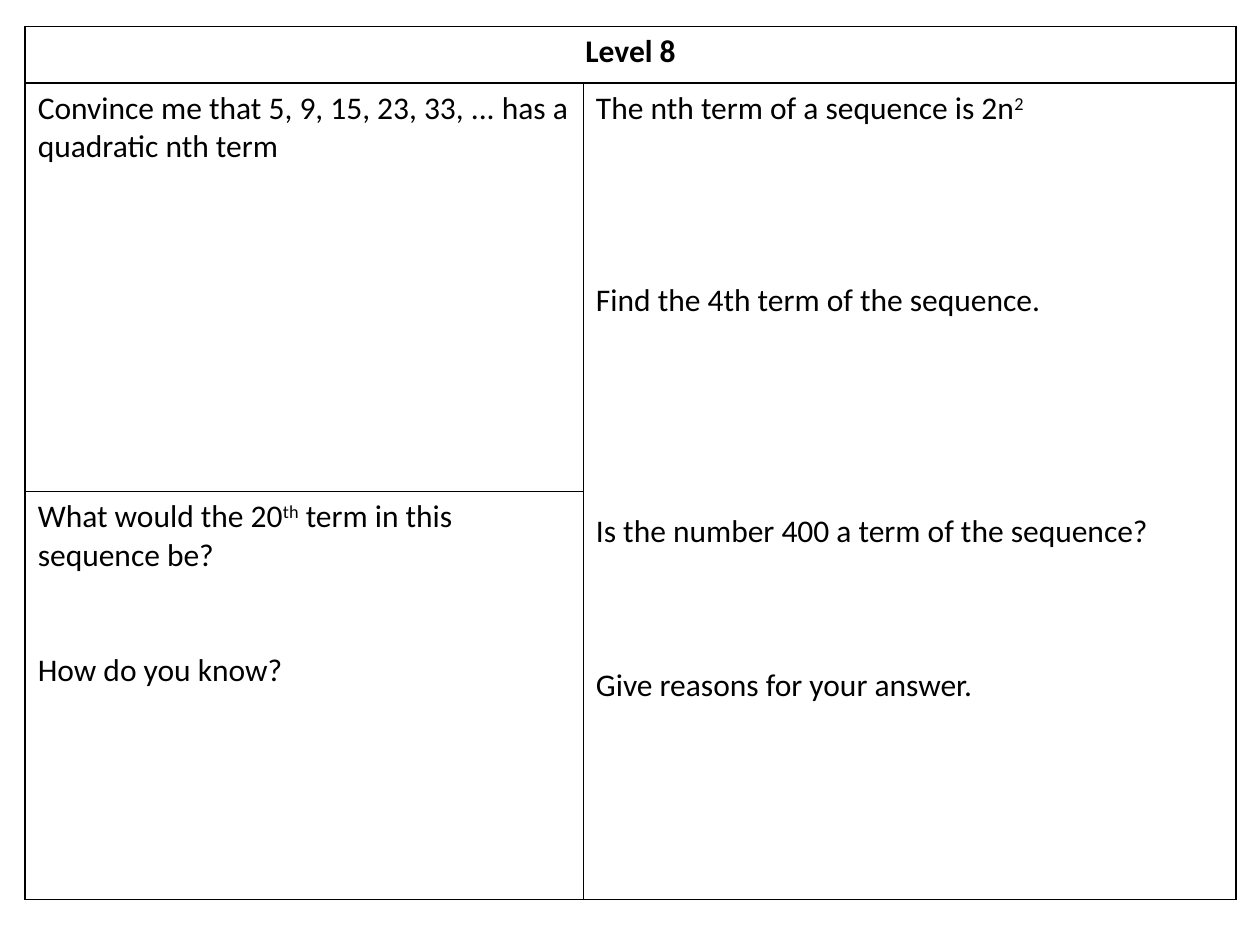
from lxml import etree
from pptx import Presentation
from pptx.dml.color import RGBColor
from pptx.enum.text import PP_ALIGN
from pptx.oxml.ns import qn
from pptx.util import Inches, Pt

CENTER, LEFT = PP_ALIGN.CENTER, PP_ALIGN.LEFT
BLACK = "000000"
FONT = "Calibri"
TEXT_SIZE = 18
LINE_HEIGHT = 22
SUPERSCRIPT = "30000"
COLUMN_WIDTHS = (4.43, 5.18)
ROW_HEIGHTS = (0.45, 3.24, 3.24)

# Each paragraph: answer lines left above it, then (text, raised) runs.
TITLE = [(0, [("Level 8", False)])]
CONVINCE = [(0, [("Convince me that 5, 9, 15, 23, 33, ... has a quadratic nth term", False)])]
TWENTIETH = [
    (0, [("What would the 20", False), ("th", True), (" term in this sequence be?", False)]),
    (2, [("How do you know?", False)]),
]
SEQUENCE = [
    (0, [("The nth term of a sequence is 2n", False), ("2", True)]),
    (4, [("Find the 4th term of the sequence.", False)]),
    (5, [("Is the number 400 a term of the sequence?", False)]),
    (3, [("Give reasons for your answer.", False)]),
]


def color(value):
    """Turn a hex string into a colour."""
    return RGBColor.from_string(value)


def add_borders(cell, value=BLACK, width=1):
    """Draw a solid line on all four sides of a cell."""
    properties = cell._tc.get_or_add_tcPr()
    for side in ("a:lnL", "a:lnR", "a:lnT", "a:lnB"):
        line = etree.SubElement(properties, qn(side), w=str(Pt(width)))
        fill = etree.SubElement(line, qn("a:solidFill"))
        etree.SubElement(fill, qn("a:srgbClr"), val=value)


def write_cell(cell, paragraphs, bold=False, align=LEFT):
    """Write paragraphs into a cell, with answer space above them."""
    frame = cell.text_frame
    for index, (blank_lines, runs) in enumerate(paragraphs):
        para = frame.add_paragraph() if index else frame.paragraphs[0]
        para.alignment = align
        para.space_before = Pt(blank_lines * LINE_HEIGHT)
        for text, raised in runs:
            span = para.add_run()
            span.text = text
            span.font.name = FONT
            span.font.size = Pt(TEXT_SIZE)
            span.font.bold = bold
            span.font.color.rgb = color(BLACK)
            if raised:
                span._r.get_or_add_rPr().set("baseline", SUPERSCRIPT)


def add_question_table(page, left, top, width, height):
    """Place the question grid in the given box."""
    frame = page.shapes.add_table(
        len(ROW_HEIGHTS), len(COLUMN_WIDTHS),
        Inches(left), Inches(top), Inches(width), Inches(height))
    table = frame.table
    table.first_row = False
    table.horz_banding = False
    for column, share in zip(table.columns, COLUMN_WIDTHS):
        column.width = Inches(width * share / sum(COLUMN_WIDTHS))
    for row, share in zip(table.rows, ROW_HEIGHTS):
        row.height = Inches(height * share / sum(ROW_HEIGHTS))
    for cell in table.iter_cells():
        add_borders(cell)
        cell.fill.background()
    table.cell(0, 0).merge(table.cell(0, 1))
    table.cell(1, 1).merge(table.cell(2, 1))
    write_cell(table.cell(0, 0), TITLE, bold=True, align=CENTER)
    write_cell(table.cell(1, 0), CONVINCE)
    write_cell(table.cell(2, 0), TWENTIETH)
    write_cell(table.cell(1, 1), SEQUENCE)


def main():
    """Build the deck and save it."""
    deck = Presentation()
    deck.slide_width, deck.slide_height = Inches(10), Inches(7.5)
    page = deck.slides.add_slide(deck.slide_layouts[6])
    add_question_table(page, 0.2, 0.21, sum(COLUMN_WIDTHS), sum(ROW_HEIGHTS))
    deck.save("out.pptx")


if __name__ == "__main__":
    main()
